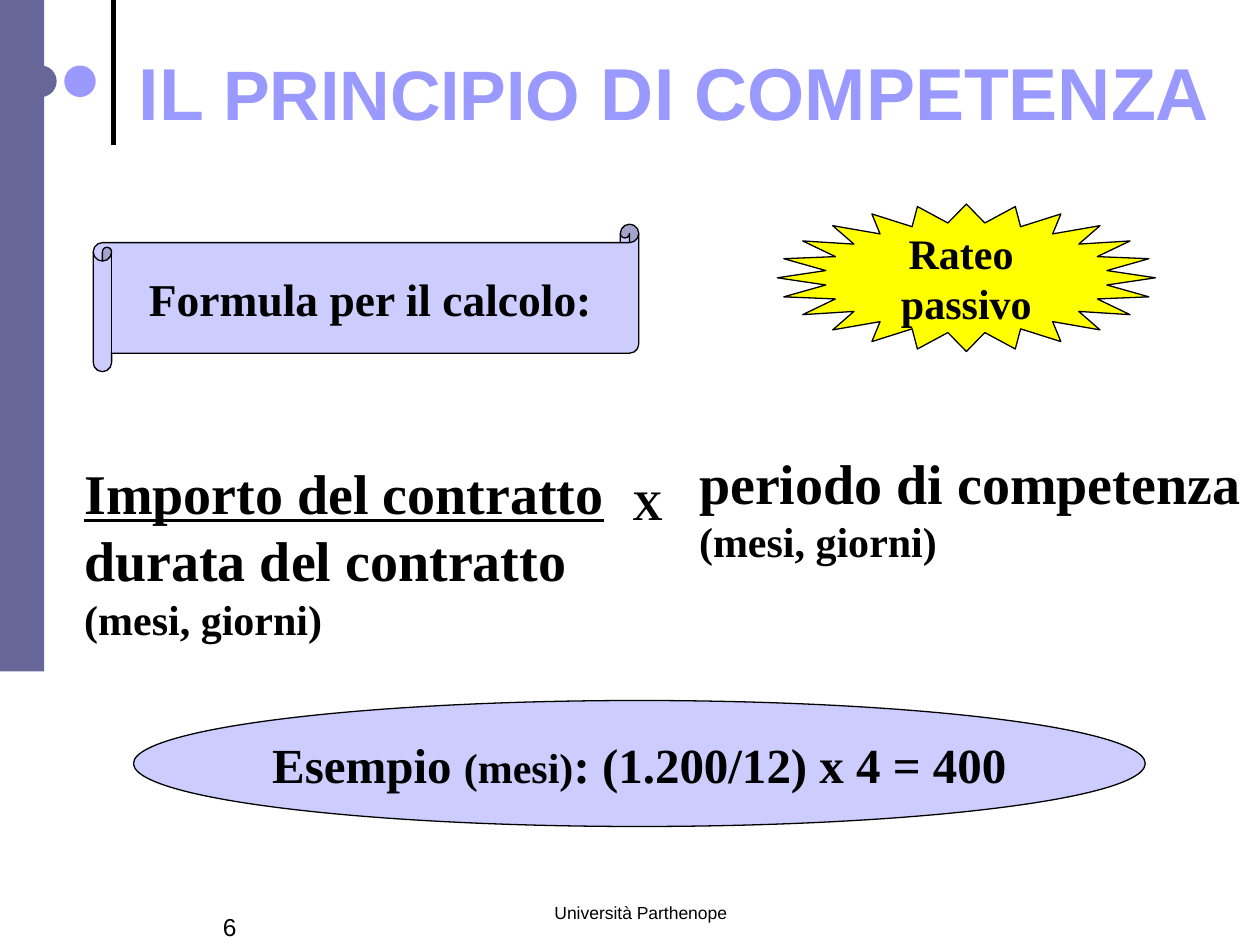
from pptx import Presentation
from pptx.dml.color import RGBColor
from pptx.enum.shapes import MSO_CONNECTOR as Connector, MSO_SHAPE as Shape
from pptx.enum.text import MSO_ANCHOR as Anchor, MSO_AUTO_SIZE as AutoSize, PP_ALIGN as Align
from pptx.oxml.ns import qn
from pptx.util import Inches, Pt
from lxml.etree import SubElement

COLORS = {"ink": "000000", "slate": "666699", "violet": "9999FF",
          "lilac": "CCCCFF", "yellow": "FFFF00"}
SERIF, SANS = "Times New Roman", "Arial"
COLUMNS = 100


class SlideBuilder:
    def __init__(self, deck):
        self.page = deck.slides.add_slide(deck.slide_layouts[5])
        self.cell = deck.slide_width / COLUMNS

    def grid(self, *cells):
        return [round(cell * self.cell) for cell in cells]

    def color(self, name):
        return RGBColor.from_string(COLORS[name])

    def fill_text(self, box, lines, font=SERIF, color="ink", bold=True,
                  align=Align.LEFT, **frame_format):
        frame = box.text_frame
        settings = {"word_wrap": True, "auto_size": AutoSize.NONE,
                    "vertical_anchor": Anchor.TOP} | frame_format
        for name, value in settings.items():
            setattr(frame, name, value)
        for index, line in enumerate(lines):
            para = frame.add_paragraph() if index else frame.paragraphs[0]
            para.alignment = align
            for text, size, *underline in line:
                span = para.add_run()
                span.text = text
                values = {"name": font, "size": Pt(size), "bold": bold,
                          "underline": bool(underline)}
                for name, value in values.items():
                    setattr(span.font, name, value)
                span.font.color.rgb = self.color(color)

    def title(self, cells, lines, **text_format):
        box = self.page.shapes.title
        for name, value in zip(("left", "top", "width", "height"), self.grid(*cells)):
            setattr(box, name, value)
        self.fill_text(box, lines, **text_format)

    def text(self, cells, lines, **text_format):
        box = self.page.shapes.add_textbox(*self.grid(*cells))
        self.fill_text(box, lines, **text_format)

    def shape(self, kind, cells, fill, lines=(), adjustment=None):
        shape = self.page.shapes.add_shape(kind, *self.grid(*cells))
        shape.shadow.inherit = False
        shape.fill.solid()
        shape.fill.fore_color.rgb = self.color(fill)
        if adjustment is not None:
            shape.adjustments[0] = adjustment
        if lines:
            shape.line.color.rgb = self.color("ink")
            shape.line.width = Pt(0.75)
            self.fill_text(shape, lines, align=Align.CENTER, word_wrap=False,
                           vertical_anchor=Anchor.MIDDLE)
        else:
            shape.line.fill.background()

    def rule(self, start, end, width):
        line = self.page.shapes.add_connector(
            Connector.STRAIGHT, *self.grid(*start), *self.grid(*end))
        line.line.color.rgb = self.color("ink")
        line.line.width = Pt(width)
        SubElement(line._element.spPr, qn("a:effectLst"))


def main():
    deck = Presentation()
    deck.slide_width, deck.slide_height = Inches(10), Inches(7.5)
    slide = SlideBuilder(deck)

    slide.rule((9, 11.5), (9, 0), 3)
    for left, fill in ((2, "slate"), (5.1, "violet")):
        slide.shape(Shape.OVAL, (left, 5.2, 2.5, 2.5), fill)
    slide.shape(Shape.RECTANGLE, (0, 0, 3.5, 53.3), "slate")

    slide.title((9, 2.1, 89, 16.7),
                [[("IL ", 42), ("PRINCIPIO", 40), (" DI COMPETENZA", 42)]],
                font=SANS, color="violet", align=Align.CENTER, margin_top=Inches(0.16))

    slide.shape(Shape.HORIZONTAL_SCROLL, (7.4, 17.8, 43.3, 11.7), "lilac",
                [[("Formula per il calcolo:", 26)]], 0.125)
    slide.shape(Shape.STAR_24_POINT, (61.7, 16.2, 30, 11.7), "yellow",
                [[("Rateo ", 24)], [("passivo", 24)]], 0.375)

    unit = [("(mesi, giorni)", 24)]
    slide.text((5.7, 35.9, 45.9, 22.5),
               [[("Importo del contratto", 32, True)], [("durata del contratto", 32)], unit])
    slide.text((48.9, 37.5, 5, 5), [[("X", 24)]], align=Align.CENTER,
               word_wrap=False, vertical_anchor=Anchor.MIDDLE)
    slide.text((54.5, 35.1, 46.7, 10.3), [[("periodo di competenza", 32)], unit])

    slide.shape(Shape.OVAL, (10.6, 55.6, 80.3, 10), "lilac",
                [[("Esempio ", 28), ("(mesi)", 24), (": (1.200/12) x 4 = 400", 28)]])

    slide.text((35, 71.1, 31.7, 5), [[("Università Parthenope", 10)]],
               font=SANS, bold=False, align=Align.CENTER)
    slide.text((16.7, 71.9, 14.2, 5), [[("6", 14)]], font=SANS, bold=False)

    deck.save("out.pptx")


if __name__ == "__main__":
    main()
